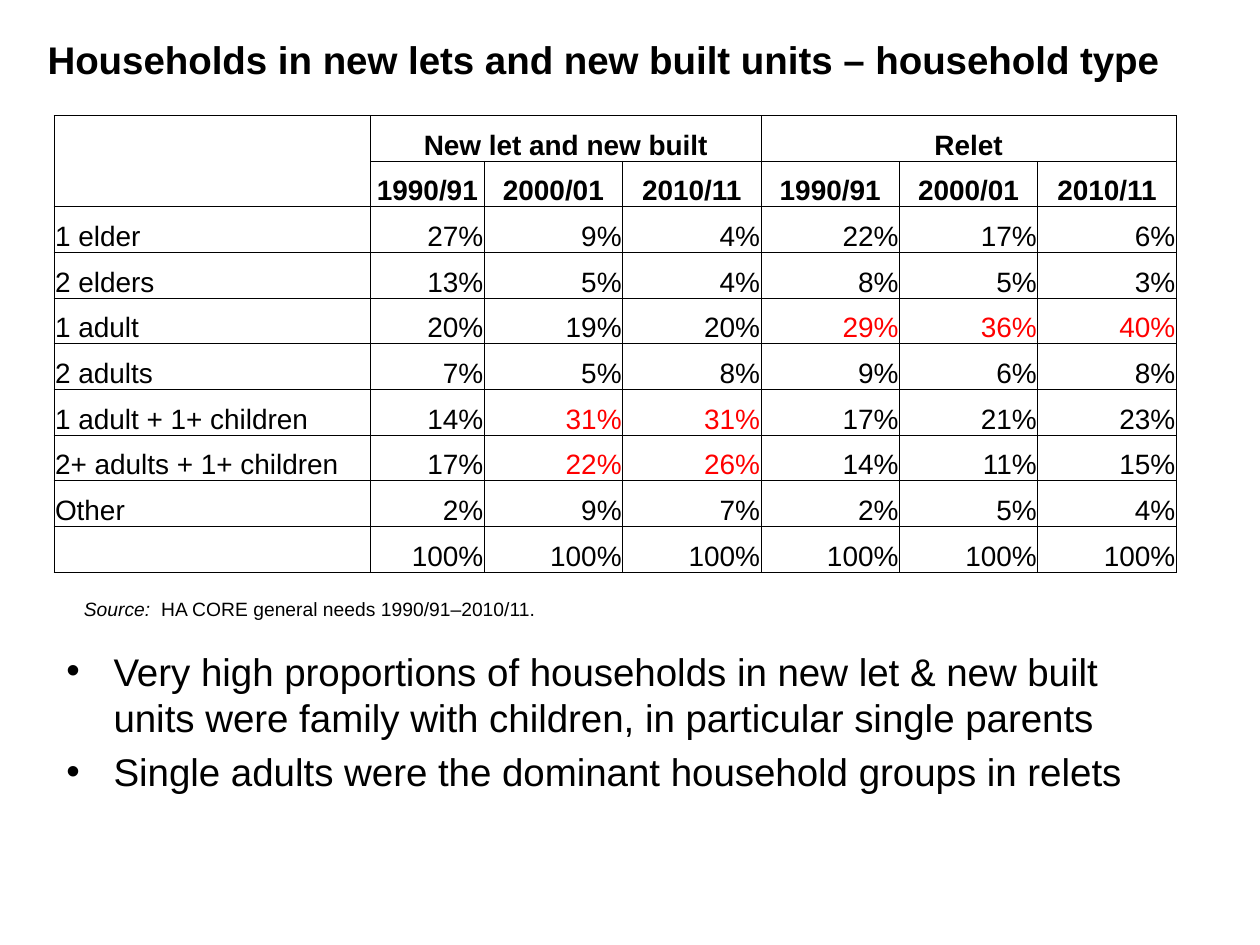
from lxml import etree
from pptx import Presentation
from pptx.dml.color import RGBColor
from pptx.enum.text import MSO_ANCHOR, PP_ALIGN
from pptx.oxml.ns import qn
from pptx.util import Cm, Pt

MIDDLE, BOTTOM, TOP = MSO_ANCHOR.MIDDLE, MSO_ANCHOR.BOTTOM, MSO_ANCHOR.TOP
LEFT, CENTER, RIGHT = PP_ALIGN.LEFT, PP_ALIGN.CENTER, PP_ALIGN.RIGHT
BLACK, RED = "000000", "FF0000"

GROUPS = ["New let and new built", "Relet"]
YEARS = ["1990/91", "2000/01", "2010/11"]
ROWS = [
    ("1 elder", [27, 9, 4, 22, 17, 6]),
    ("2 elders", [13, 5, 4, 8, 5, 3]),
    ("1 adult", [20, 19, 20, 29, 36, 40]),
    ("2 adults", [7, 5, 8, 9, 6, 8]),
    ("1 adult + 1+ children", [14, 31, 31, 17, 21, 23]),
    ("2+ adults + 1+ children", [17, 22, 26, 14, 11, 15]),
    ("Other", [2, 9, 7, 2, 5, 4]),
    ("", [100] * 6),
]
# Columns to stress, by row label
STRESS = {
    "1 adult": (4, 5, 6),
    "1 adult + 1+ children": (2, 3),
    "2+ adults + 1+ children": (2, 3),
}
WIDTHS = [6.38, 2.29] + [2.79] * 5
HEIGHT = 0.92
POINTS = [
    "Very high proportions of households in new let & new built units "
    "were family with children, in particular single parents",
    "Single adults were the dominant household groups in relets",
]


def color(code):
    return RGBColor.from_string(code)


def add_run(para, text, size, code=BLACK, bold=False, italic=False):
    run = para.add_run()
    run.text = text
    font = run.font
    font.name, font.size = "Arial", Pt(size)
    font.bold, font.italic = bold, italic
    font.color.rgb = color(code)


def add_box(slide, left, top, width, height, anchor=TOP, wrap=True):
    box = slide.shapes.add_textbox(Cm(left), Cm(top), Cm(width), Cm(height))
    frame = box.text_frame
    frame.word_wrap = wrap
    frame.vertical_anchor = anchor
    return frame


def set_bullet(para):
    props = para._p.get_or_add_pPr()
    props.set("marL", str(Cm(0.95)))
    props.set("indent", str(-Cm(0.95)))
    etree.SubElement(props, qn("a:buFont")).set("typeface", "Arial")
    etree.SubElement(props, qn("a:buChar")).set("char", "•")


def style_cell(cell):
    """Give the cell thin margins, black borders and no fill."""
    cell.margin_left = cell.margin_right = cell.margin_top = Cm(0.02)
    cell.margin_bottom = 0
    cell.vertical_anchor = BOTTOM
    props = cell._tc.get_or_add_tcPr()
    for side in ("lnL", "lnR", "lnT", "lnB"):
        line = etree.SubElement(props, qn(f"a:{side}"), w=str(Pt(0.5)))
        fill = etree.SubElement(line, qn("a:solidFill"))
        etree.SubElement(fill, qn("a:srgbClr"), val=BLACK)
    cell.fill.background()


def fill_cell(cell, text, align, code=BLACK, bold=False):
    para = cell.text_frame.paragraphs[0]
    para.alignment = align
    if text:
        add_run(para, text, 16, code, bold)


def add_grid(slide):
    count = len(ROWS) + 2
    frame = slide.shapes.add_table(
        count, len(WIDTHS), Cm(1.09), Cm(2.33),
        Cm(sum(WIDTHS)), Cm(HEIGHT * count))
    table = frame.table
    table.first_row = table.horz_banding = False
    for col, width in zip(table.columns, WIDTHS):
        col.width = Cm(width)
    for row in table.rows:
        row.height = Cm(HEIGHT)
    for cell in table.iter_cells():
        style_cell(cell)

    table.cell(0, 0).merge(table.cell(1, 0))
    span = len(YEARS)
    for i, group in enumerate(GROUPS):
        first = 1 + i * span
        head = table.cell(0, first)
        head.merge(table.cell(0, first + span - 1))
        fill_cell(head, group, CENTER, bold=True)
        for j, year in enumerate(YEARS):
            fill_cell(table.cell(1, first + j), year, CENTER, bold=True)

    for r, (label, shares) in enumerate(ROWS, 2):
        fill_cell(table.cell(r, 0), label, LEFT)
        for c, share in enumerate(shares, 1):
            code = RED if c in STRESS.get(label, ()) else BLACK
            fill_cell(table.cell(r, c), f"{share}%", RIGHT, code)


def add_title(slide):
    frame = add_box(slide, 0.71, 0, 24.69, 2.39, MIDDLE)
    add_run(frame.paragraphs[0],
            "Households in new lets and new built units – household type",
            22, bold=True)


def add_source(slide):
    para = add_box(slide, 1.32, 11.91, 9.73, 0.74, wrap=False).paragraphs[0]
    para.alignment = RIGHT
    add_run(para, "Source:  ", 11, italic=True)
    add_run(para, "HA CORE general needs 1990/91–2010/11.", 11)


def add_points(slide):
    frame = add_box(slide, 1.09, 12.93, 22.61, 3.28)
    for i, point in enumerate(POINTS):
        para = frame.add_paragraph() if i else frame.paragraphs[0]
        para.space_before = Pt(4.4)
        set_bullet(para)
        add_run(para, point, 22)


def main():
    deck = Presentation()
    deck.slide_width, deck.slide_height = Cm(25.4), Cm(19.05)
    slide = deck.slides.add_slide(deck.slide_layouts[6])
    add_title(slide)
    add_source(slide)
    add_grid(slide)
    add_points(slide)
    deck.save("out.pptx")


if __name__ == "__main__":
    main()
